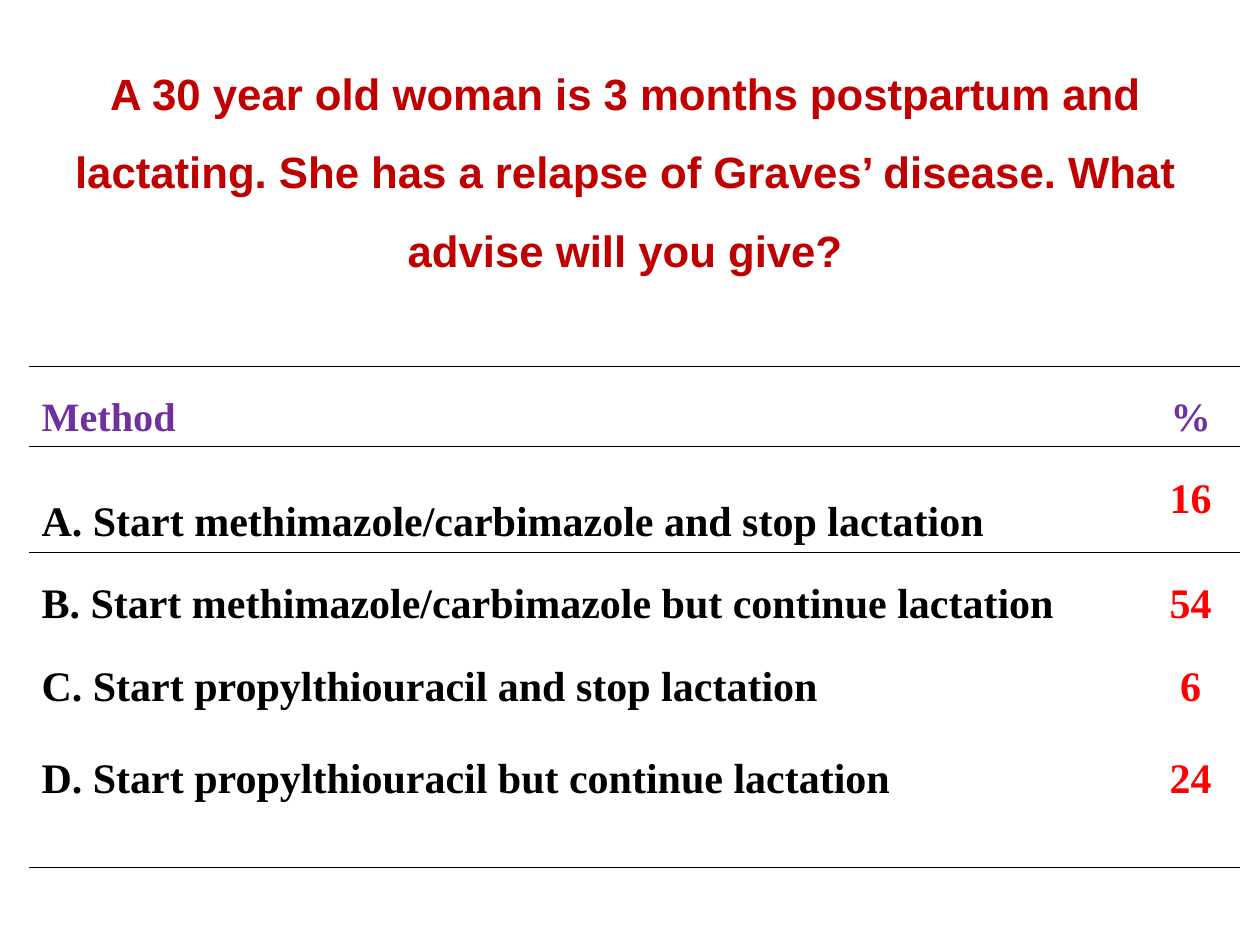
from dataclasses import dataclass

from lxml.etree import SubElement
from pptx import Presentation
from pptx.dml.color import RGBColor as RGB
from pptx.enum.text import MSO_ANCHOR as Anchor, PP_ALIGN as Align
from pptx.oxml.ns import qn
from pptx.util import Inches, Pt


@dataclass(frozen=True)
class Theme:
    title_font: str = "Arial"
    table_font: str = "Times New Roman"
    title: str = "C00000"
    header: str = "7030A0"
    answer: str = "000000"
    percent: str = "FF0000"
    rule: str = "000000"
    title_size: float = 25
    header_size: float = 23
    body_size: float = 24


@dataclass(frozen=True)
class Row:
    label: str
    percent: str
    height: float
    top: float = 0
    bottom: float = 0
    spacing: float = 1.5
    hanging: float = 0


THEME = Theme()
TITLE = (
    "A 30 year old woman is 3 months postpartum and lactating. "
    "She has a relapse of Graves’ disease. What advise will you give?"
)
COLUMNS = (8.83, 0.78)
ROWS = (
    Row("Method", "%", 0.61, top=1, bottom=1),
    Row("A. Start methimazole/carbimazole and stop lactation", "16", 0.63,
        top=1, bottom=0.5, spacing=2, hanging=0.5),
    Row("B. Start methimazole/carbimazole but continue lactation", "54", 0.62,
        top=0.5),
    Row("C. Start propylthiouracil and stop lactation", "6", 0.73),
    Row("D. Start propylthiouracil but continue lactation", "24", 1.12, bottom=1),
)


def write(tf, text: str, font: str, size: float, color: str,
          align=Align.LEFT, spacing: float = 1.5):
    p = tf.paragraphs[0]
    p.text = text
    p.alignment = align
    p.line_spacing = spacing
    p.font.name = font
    p.font.size = Pt(size)
    p.font.bold = True
    p.font.color.rgb = RGB.from_string(color)
    return p


def set_borders(cell, top: float, bottom: float) -> None:
    tc_pr = cell._tc.get_or_add_tcPr()
    for side, width in (("L", 0), ("R", 0), ("T", top), ("B", bottom)):
        ln = SubElement(tc_pr, qn(f"a:ln{side}"), w=str(Pt(width)))
        if width:
            fill = SubElement(ln, qn("a:solidFill"))
            SubElement(fill, qn("a:srgbClr"), val=THEME.rule)
        else:
            SubElement(ln, qn("a:noFill"))


def add_title(s) -> None:
    sp = s.shapes.add_textbox(Inches(0.25), Inches(0.17), Inches(9.42), Inches(2.17))
    tf = sp.text_frame
    tf.word_wrap = True
    tf.vertical_anchor = Anchor.MIDDLE
    write(tf, TITLE, THEME.title_font, THEME.title_size, THEME.title, Align.CENTER)


def add_results(s) -> None:
    table = s.shapes.add_table(
        len(ROWS), len(COLUMNS), Inches(0.23), Inches(2.91),
        Inches(sum(COLUMNS)), Inches(sum(row.height for row in ROWS)),
    ).table
    table.horz_banding = False
    for column, width in zip(table.columns, COLUMNS):
        column.width = Inches(width)
    for i, row in enumerate(ROWS):
        table.rows[i].height = Inches(row.height)
        is_header = i == 0
        size = THEME.header_size if is_header else THEME.body_size
        label, percent = table.cell(i, 0), table.cell(i, 1)
        for cell in (label, percent):
            set_borders(cell, row.top, row.bottom)
            cell.fill.background()
        p = write(label.text_frame, row.label, THEME.table_font, size,
                  THEME.header if is_header else THEME.answer, spacing=row.spacing)
        if row.hanging:
            p_pr = p._p.get_or_add_pPr()
            p_pr.set("marL", str(Inches(row.hanging)))
            p_pr.set("indent", str(-Inches(row.hanging)))
        write(percent.text_frame, row.percent, THEME.table_font, size,
              THEME.header if is_header else THEME.percent, Align.CENTER)


def main() -> None:
    prs = Presentation()
    prs.slide_width, prs.slide_height = Inches(10), Inches(7.5)
    s = prs.slides.add_slide(prs.slide_layouts[6])
    add_results(s)
    add_title(s)
    prs.save("out.pptx")


if __name__ == "__main__":
    main()
